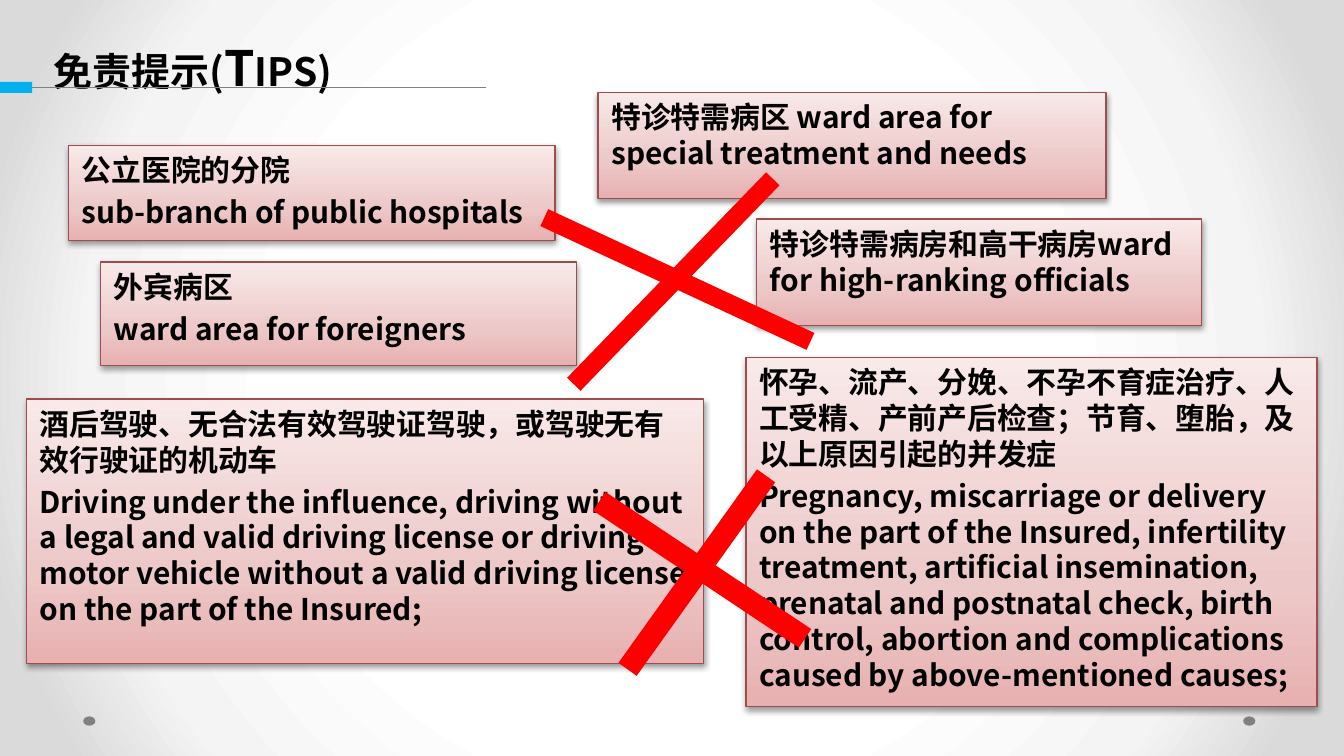
from pptx import Presentation
from pptx.dml.color import RGBColor
from pptx.enum import shapes, text
from pptx.oxml import parse_xml
from pptx.oxml.ns import nsdecls, qn
from pptx.util import Pt

FONT = "Noto Sans CJK SC"
BLACK = RGBColor(0x00, 0x00, 0x00)
GREY = RGBColor(0x80, 0x80, 0x80)
CYAN = RGBColor(0x00, 0xB0, 0xF0)
RED = RGBColor(0xFF, 0x00, 0x00)
BORDER = RGBColor(0x9A, 0x4E, 0x4E)
SHADOW = RGBColor(0x00, 0x00, 0x00)
PINKS = [(0, RGBColor(0xE8, 0xB0, 0xB0)), (35, RGBColor(0xED, 0xC8, 0xC8)),
         (100, RGBColor(0xF9, 0xE9, 0xE9))]
BACKDROP = [(50, RGBColor(0xFF, 0xFF, 0xFF)), (76, RGBColor(0xF4, 0xF4, 0xF4)),
            (92, RGBColor(0xDA, 0xDA, 0xDA))]

# Content: lengths in points; boxes are (left, top, width, height), paragraphs
TITLE = "免责提示(Tips)"
EXCLUSIONS = [
    ((36.7, 77.8, 260.6, 51.1), ["公立医院的分院", "sub-branch of public hospitals"]),
    ((54, 140.4, 254.9, 55.4), ["外宾病区", "ward area for foreigners"]),
    ((320.4, 49.4, 272.2, 56.9),
     ["特诊特需病区 ward area for special treatment and needs"]),
    ((405.4, 117.4, 238.3, 56.9),
     ["特诊特需病房和高干病房ward for high-ranking officials"]),
    ((14.2, 213.8, 362.9, 141.8),
     ["酒后驾驶、无合法有效驾驶证驾驶，或驾驶无有效行驶证的机动车",
      "Driving under the influence, driving without a legal and valid driving "
      "license or driving a motor vehicle without a valid driving license on "
      "the part of the Insured;"]),
    ((399.6, 191.5, 306, 187.2),
     ["怀孕、流产、分娩、不孕不育症治疗、人工受精、产前产后检查；节育、堕胎，"
      "及以上原因引起的并发症",
      "Pregnancy, miscarriage or delivery on the part of the Insured, "
      "infertility treatment, artificial insemination, prenatal and postnatal "
      "check, birth control, abortion and complications caused by "
      "above-mentioned causes;"]),
]
# Each cross: line width, then its two strokes (x1, y1, x2, y2)
CROSSES = [
    (10, [(291.6, 116.6, 434.2, 182.9), (414, 95.8, 307.4, 205.9)]),
    (12, [(410.4, 254.9, 336.2, 358.6), (321.1, 268.6, 431.3, 342)]),
]

presentation = Presentation()
presentation.slide_width, presentation.slide_height = Pt(720), Pt(405)
slide = presentation.slides.add_slide(presentation.slide_layouts[6])


def set_gradient(fill, parent, stops, direction):
    fill.gradient()
    gradient = parent.find(qn("a:gradFill"))
    marks = "".join(f'<a:gs pos="{position * 1000}"><a:srgbClr val="{color}"/></a:gs>'
                    for position, color in stops)
    parent.replace(gradient, parse_xml(
        f'<a:gradFill {nsdecls("a")} rotWithShape="1"><a:gsLst>{marks}</a:gsLst>'
        f"{direction}</a:gradFill>"))


def add_shape(kind, place, color=None):
    shape = slide.shapes.add_shape(kind, *map(Pt, place))
    shape.shadow.inherit = False
    if color is not None:
        shape.fill.solid()
        shape.fill.fore_color.rgb = color
        shape.line.fill.background()
    return shape


def add_line(ends, color, width):
    line = slide.shapes.add_connector(shapes.MSO_CONNECTOR.STRAIGHT, *map(Pt, ends))
    line.line.color.rgb = color
    line.line.width = Pt(width)
    line._element.spPr.append(parse_xml(f'<a:effectLst {nsdecls("a")}/>'))


def format_run(run, size):
    run.font.name, run.font.size, run.font.bold = FONT, Pt(size), True
    run.font.color.rgb = BLACK
    properties = run._r.get_or_add_rPr()
    properties.find(qn("a:latin")).addnext(
        parse_xml(f'<a:ea {nsdecls("a")} typeface="{FONT}"/>'))
    return properties


def add_exclusion(place, paragraphs):
    box = add_shape(shapes.MSO_SHAPE.RECTANGLE, place)
    properties = box._element.spPr
    set_gradient(box.fill, properties, PINKS, '<a:lin ang="16200000" scaled="1"/>')
    box.line.color.rgb = BORDER
    box.line.width = Pt(0.75)
    properties.find(qn("a:effectLst")).append(parse_xml(
        f'<a:outerShdw {nsdecls("a")} blurRad="{Pt(3.1)}" dist="{Pt(1.6)}" dir="5400000" '
        f'rotWithShape="0"><a:srgbClr val="{SHADOW}"><a:alpha val="38000"/></a:srgbClr>'
        "</a:outerShdw>"))
    frame = box.text_frame
    frame.word_wrap = True
    frame.vertical_anchor = text.MSO_ANCHOR.TOP
    frame.text = "\n".join(paragraphs)
    for paragraph in frame.paragraphs:
        paragraph.alignment = text.PP_ALIGN.LEFT
        paragraph.line_spacing = Pt(19.2)
        paragraph.space_before = Pt(3.2)
        format_run(paragraph.runs[0], 16)


# Background and the two dots at the foot
set_gradient(slide.background.fill, slide.background._cSld.bg.bgPr, BACKDROP,
             '<a:path path="circle"><a:fillToRect l="50000" t="50000" r="50000" '
             'b="50000"/></a:path>')
for left in (666, 44.6):
    add_shape(shapes.MSO_SHAPE.OVAL, (left, 383.8, 6.5, 5), GREY)

# Title
title = slide.shapes.add_textbox(Pt(14.4), Pt(21.6), Pt(311.8), Pt(33.8))
title.text_frame.word_wrap = True
title.text_frame.vertical_anchor = text.MSO_ANCHOR.BOTTOM
title.text_frame.margin_left = Pt(14.4)
title.text_frame.text = TITLE
format_run(title.text_frame.paragraphs[0].runs[0], 26.1).set("cap", "small")

# Exclusion boxes, then the crosses over them
for place, paragraphs in EXCLUSIONS:
    add_exclusion(place, paragraphs)
for width, strokes in CROSSES:
    for ends in strokes:
        add_line(ends, RED, width)

# Title rule and its accent
add_line((260.6, 46.8, 16.6, 46.8), GREY, 0.75)
add_shape(shapes.MSO_SHAPE.RECTANGLE, (0, 43.9, 17.3, 5.8), CYAN)

presentation.save("out.pptx")
